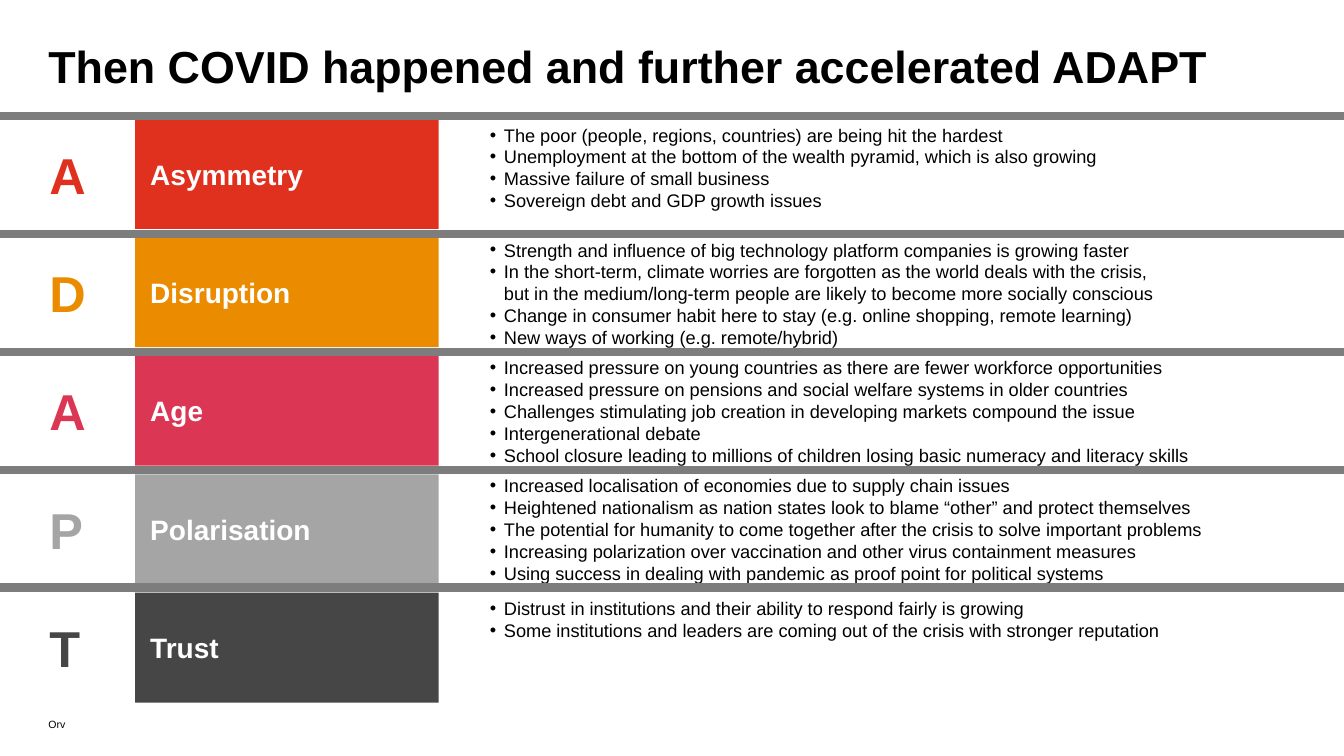
from copy import deepcopy

from lxml.etree import SubElement
from pptx import Presentation
from pptx.dml.color import RGBColor
from pptx.enum.shapes import MSO_CONNECTOR, MSO_SHAPE
from pptx.enum.text import MSO_ANCHOR, PP_ALIGN
from pptx.oxml.ns import qn
from pptx.util import Inches, Pt

# Content
TITLE = "Then COVID happened and further accelerated ADAPT"
FOOTER = "Orv"
THEMES = [
    ("Asymmetry", "red", [
        "The poor (people, regions, countries) are being hit the hardest",
        "Unemployment at the bottom of the wealth pyramid, which is also growing",
        "Massive failure of small business",
        "Sovereign debt and GDP growth issues",
    ]),
    ("Disruption", "orange", [
        "Strength and influence of big technology platform companies is growing faster",
        "In the short-term, climate worries are forgotten as the world deals with the crisis, \v"
        "but in the medium/long-term people are likely to become more socially conscious",
        "Change in consumer habit here to stay (e.g. online shopping, remote learning)",
        "New ways of working (e.g. remote/hybrid)",
    ]),
    ("Age", "rose", [
        "Increased pressure on young countries as there are fewer workforce opportunities",
        "Increased pressure on pensions and social welfare systems in older countries",
        "Challenges stimulating job creation in developing markets compound the issue",
        "Intergenerational debate",
        "School closure leading to millions of children losing basic numeracy and literacy skills",
    ]),
    ("Polarisation", "silver", [
        "Increased localisation of economies due to supply chain issues",
        "Heightened nationalism as nation states look to blame “other” and protect themselves",
        "The potential for humanity to come together after the crisis to solve important problems",
        "Increasing polarization over vaccination and other virus containment measures",
        "Using success in dealing with pandemic as proof point for political systems",
    ]),
    ("Trust", "charcoal", [
        "Distrust in institutions and their ability to respond fairly is growing",
        "Some institutions and leaders are coming out of the crisis with stronger reputation",
    ]),
]

# Formats
COLOURS = {
    "red": "E0301E", "orange": "EB8C00", "rose": "DB3754", "silver": "A5A5A5",
    "charcoal": "464646", "rule": "7D7D7D", "black": "000000", "white": "FFFFFF",
}
TITLE_FONT = {"name": "Arial", "size": Pt(32), "bold": True}
LETTER_FONT = {"name": "Arial", "size": Pt(36), "bold": True}
LABEL_FONT = {"name": "Arial", "size": Pt(20), "bold": True}
BULLET_FONT = {"name": "Arial", "size": Pt(13), "bold": False}
FOOTER_FONT = {"name": "Arial", "size": Pt(7.5), "bold": False}

# Grid, in inches: (left, width) of each column, and row positions
SLIDE_WIDTH, SLIDE_HEIGHT = 13.33, 7.5
LETTER_COLUMN, LABEL_COLUMN, BULLET_COLUMN = (0.49, 0.6), (1.34, 3.01), (4.75, 8.13)
FIRST_CARD, LAST_CARD, CARD_HEIGHT = 1.18, 5.88, 1.09
FIRST_RULE, RULE_PITCH = 1.15, 1.17
CARD_PITCH = (LAST_CARD - FIRST_CARD) / (len(THEMES) - 1)
ROOMY_LINES = 4

presentation = Presentation()
presentation.slide_width = Inches(SLIDE_WIDTH)
presentation.slide_height = Inches(SLIDE_HEIGHT)
slide = presentation.slides.add_slide(presentation.slide_layouts[6])


def colour(name):
    return RGBColor.from_string(COLOURS[name])


def write(shape, lines, font, ink, insets=(0, 0), anchor=MSO_ANCHOR.TOP):
    """Fill a shape with one paragraph per line."""
    frame = shape.text_frame
    horizontal, vertical = map(Inches, insets)
    settings = {
        "word_wrap": True, "vertical_anchor": anchor,
        "margin_left": horizontal, "margin_right": horizontal,
        "margin_top": vertical, "margin_bottom": vertical,
    }
    for key, value in settings.items():
        setattr(frame, key, value)
    for index, line in enumerate(lines):
        paragraph = frame.paragraphs[0] if index == 0 else frame.add_paragraph()
        paragraph.text = line
        paragraph.alignment = PP_ALIGN.LEFT
        for run in paragraph.runs:
            for key, value in font.items():
                setattr(run.font, key, value)
            run.font.color.rgb = colour(ink)
        # Line breaks take the size of the text around them
        for line_break in paragraph._p.findall(qn("a:br")):
            line_break.insert(0, deepcopy(paragraph.runs[0]._r.rPr))
    return frame


def add_text(left, top, width, height, *text, **options):
    box = slide.shapes.add_textbox(*map(Inches, (left, top, width, height)))
    return write(box, *text, **options)


def add_card(column, top, fill, *text, **options):
    left, width = column
    card = slide.shapes.add_shape(
        MSO_SHAPE.RECTANGLE, *map(Inches, (left, top, width, CARD_HEIGHT)))
    card.shadow.inherit = False
    card.fill.solid()
    card.fill.fore_color.rgb = colour(fill)
    card.line.fill.background()
    write(card, *text, anchor=MSO_ANCHOR.MIDDLE, **options)


def add_bullets(frame):
    for paragraph in frame.paragraphs:
        properties = paragraph._p.get_or_add_pPr()
        properties.set("marL", str(Inches(0.15)))
        properties.set("indent", str(-Inches(0.14)))
        bullet_colour = SubElement(properties, qn("a:buClr"))
        SubElement(bullet_colour, qn("a:srgbClr")).set("val", COLOURS["black"])
        SubElement(properties, qn("a:buFont")).set("typeface", "Arial")
        SubElement(properties, qn("a:buChar")).set("char", "•")


def add_rule(top):
    rule = slide.shapes.add_connector(
        MSO_CONNECTOR.STRAIGHT, 0, Inches(top), Inches(SLIDE_WIDTH), Inches(top))
    rule.line.color.rgb = colour("rule")
    rule.line.width = Pt(6)
    SubElement(rule._element.spPr, qn("a:effectLst"))


# Title and footer
title = add_text(0.48, 0.47, 12.36, 1.52, [TITLE], TITLE_FONT, "black")
title.paragraphs[0].line_spacing = 0.85
add_text(0.48, 7.1, 5.99, 0.15, [FOOTER], FOOTER_FONT, "black", anchor=MSO_ANCHOR.BOTTOM)

# One row per theme: letter, label and bullets
for row, (label, shade, points) in enumerate(THEMES):
    card_top = FIRST_CARD + row * CARD_PITCH
    rule_top = FIRST_RULE + row * RULE_PITCH
    add_card(LETTER_COLUMN, card_top, "white", [label[0]], LETTER_FONT, shade)
    add_card(LABEL_COLUMN, card_top, shade, [label], LABEL_FONT, "white", insets=(0.15, 0.1))

    # Full rows start their bullets right at the rule
    line_count = sum(point.count("\v") + 1 for point in points)
    text_top = rule_top if line_count > ROOMY_LINES else card_top
    left, width = BULLET_COLUMN
    add_bullets(add_text(left, text_top, width, 1, points, BULLET_FONT, "black",
                         insets=(0.1, 0.05)))

# Rules above the rows, in front of the cards
for row in range(len(THEMES)):
    add_rule(FIRST_RULE + row * RULE_PITCH)

presentation.save("out.pptx")
